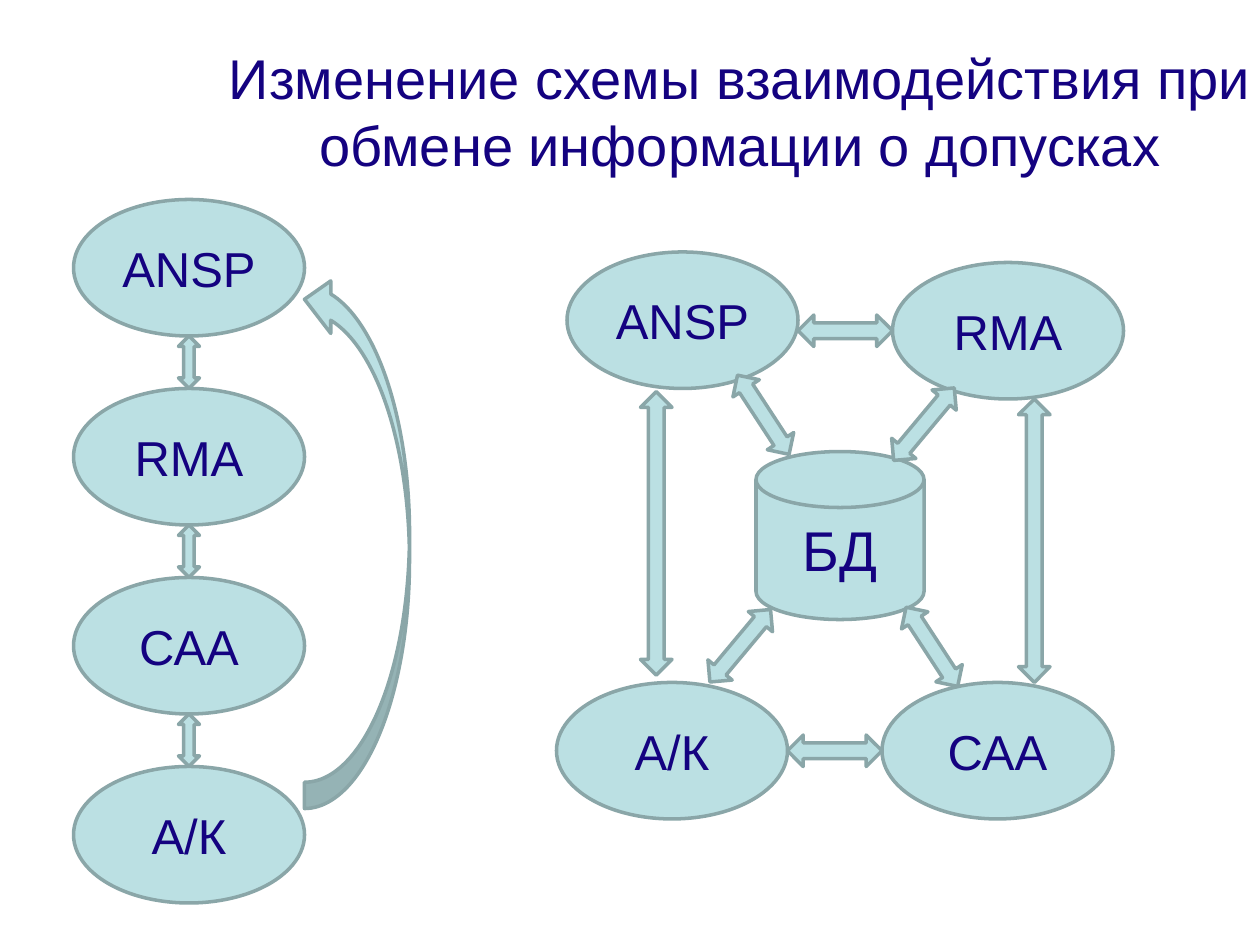
from pptx import Presentation
from pptx.dml.color import RGBColor
from pptx.enum.shapes import MSO_SHAPE
from pptx.enum.text import MSO_ANCHOR, MSO_AUTO_SIZE, PP_ALIGN
from pptx.util import Inches, Pt

NAVY = RGBColor(0x14, 0x02, 0x80)
AQUA = RGBColor(0xBB, 0xE0, 0xE3)
GREY_TEAL = RGBColor(0x8A, 0xA6, 0xA8)

presentation = Presentation()
presentation.slide_width = Inches(10)
presentation.slide_height = Inches(7.5)
slide = presentation.slides.add_slide(presentation.slide_layouts[5])
cell = presentation.slide_width / 120  # grid of 120 columns by 90 rows


def write(holder, words, size):
    frame = holder.text_frame
    frame.text = words
    frame_format = {
        "word_wrap": True,
        "auto_size": MSO_AUTO_SIZE.NONE,
        "vertical_anchor": MSO_ANCHOR.MIDDLE,
    }
    for name, value in frame_format.items():
        setattr(frame, name, value)
    paragraph = frame.paragraphs[0]
    paragraph.alignment = PP_ALIGN.CENTER
    for name, value in {"name": "Arial", "size": Pt(size)}.items():
        setattr(paragraph.font, name, value)
    paragraph.font.color.rgb = NAVY


def draw(preset, column, row, columns, rows, rotation=0):
    """Add a preset shape placed and sized in grid cells."""
    box = [round(n * cell) for n in (column, row, columns, rows)]
    part = slide.shapes.add_shape(preset, *box)
    part.shadow.inherit = False
    part.rotation = rotation
    part.fill.solid()
    part.fill.fore_color.rgb = AQUA
    part.line.color.rgb = GREY_TEAL
    part.line.width = Pt(2)
    return part


title = slide.shapes.title
title_box = {"left": 19, "top": 3, "width": 103, "height": 15}
for side, cells in title_box.items():
    setattr(title, side, round(cells * cell))
write(title, "Изменение схемы взаимодействия при обмене информации о допусках", 32)

# Old scheme: a chain of participants
chain = ["ANSP", "RMA", "САА", "А/К"]
chain_top, chain_step, oval_width, oval_height = 19, 18, 22, 13
participants = [
    (name, 7, chain_top + chain_step * i) for i, name in enumerate(chain)
]

# New scheme: participants around a shared database
participants += [
    ("ANSP", 54, 24), ("RMA", 85, 25), ("САА", 84, 65), ("А/К", 53, 65),
]
for name, column, row in participants:
    oval = draw(MSO_SHAPE.OVAL, column, row, oval_width, oval_height)
    write(oval, name, 28)

for i in range(len(chain) - 1):
    link_top = chain_top + oval_height + chain_step * i
    draw(MSO_SHAPE.UP_DOWN_ARROW, 17, link_top, 2, chain_step - oval_height)

database = draw(MSO_SHAPE.FLOWCHART_MAGNETIC_DISK, 72, 43, 16, 16)
write(database, "БД", 32)

exchanges = [
    (66, 60, 9, 309.9),
    (84.25, 60.1, 9, 236.9),
    (68.2, 38, 9, 236.9),
    (83.5, 38.9, 9, 309.9),
    (75, 70, 9, 0),
    (76, 30, 9, 0),
    (85, 50, 27, 90),
    (49, 49.3, 27, 90),
]
for column, row, length, rotation in exchanges:
    draw(MSO_SHAPE.LEFT_RIGHT_ARROW, column, row, length, 3, rotation)

draw(MSO_SHAPE.CURVED_RIGHT_ARROW, 29, 26, 10, 51, 180)

presentation.save("out.pptx")
